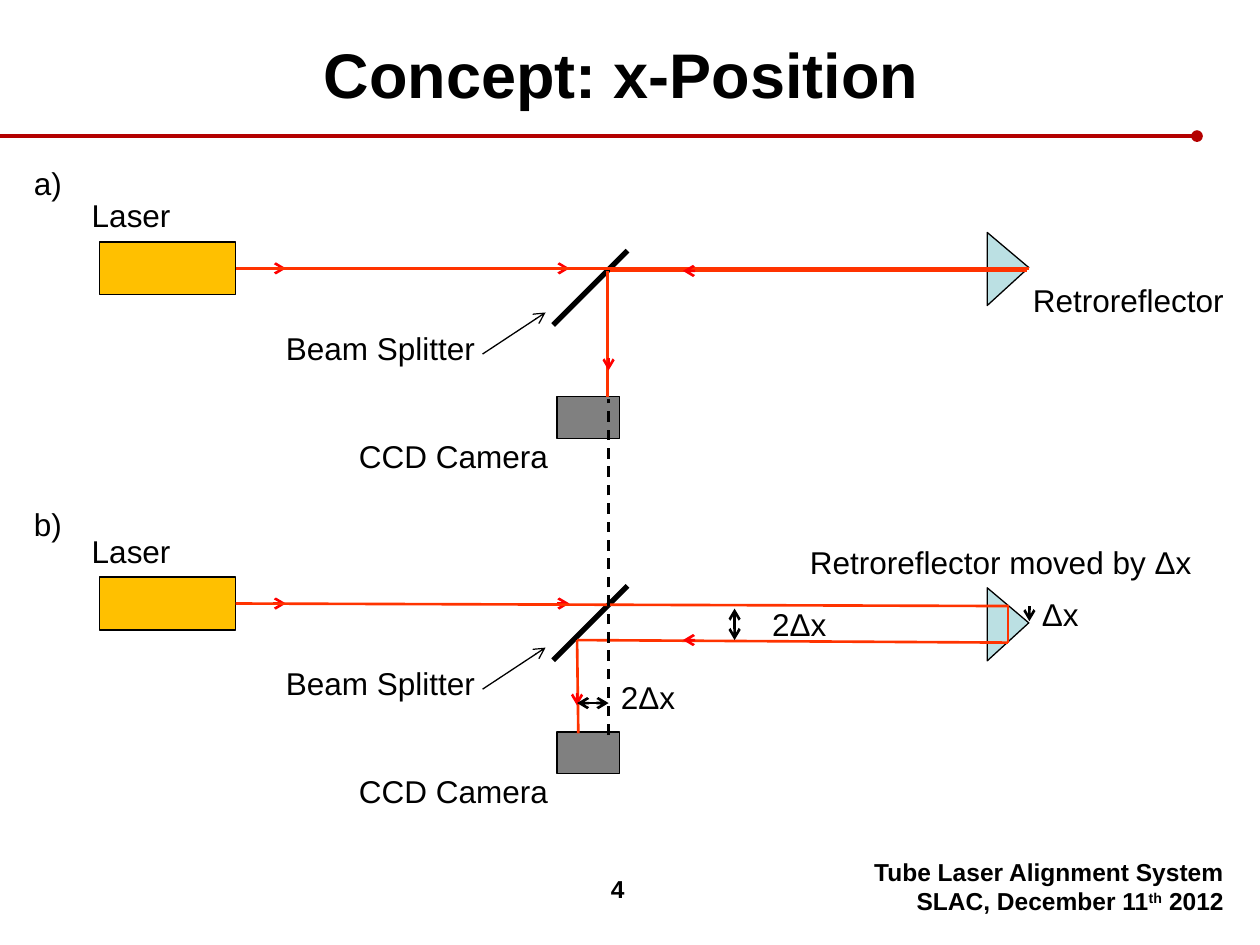
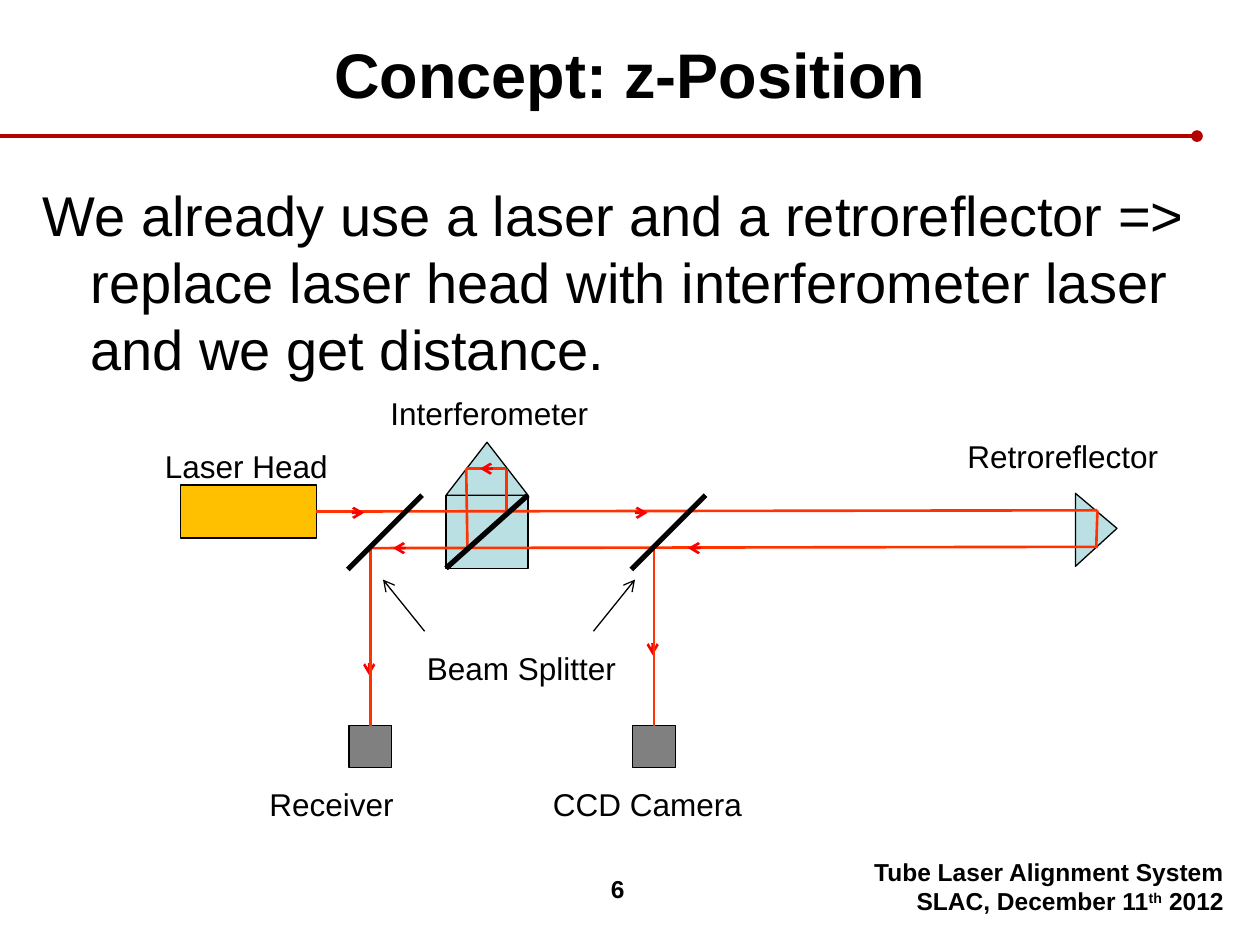
from pptx import Presentation
from pptx import util as u
from pptx.dml.color import RGBColor
from pptx.enum import dml, shapes, text
from pptx.oxml.ns import qn
from lxml import etree

PX = 9144
FONT = "Arial"
HUES = {
    "ink": "000000", "rule": "B40000", "beam": "FF3300", "mark": "FF0000",
    "glass": "BBE0E3", "laser": "FFC000", "sensor": "808080",
}
PENS = {
    "rule": ("rule", 2.25, {"tailEnd": "oval"}),
    "beam": ("beam", 1.5, {}),
    "mark": ("mark", 1.5, {"tailEnd": "arrow"}),
    "plate": ("ink", 3, {}),
    "hint": ("ink", 0.75, {"tailEnd": "arrow"}),
    "shift": ("ink", 1.5, {"tailEnd": "arrow"}),
    "span": ("ink", 1.5, {"headEnd": "arrow", "tailEnd": "arrow"}),
    "dash": ("ink", 1.5, {}),
}
RECT = shapes.MSO_SHAPE.RECTANGLE
TRI = shapes.MSO_SHAPE.ISOSCELES_TRIANGLE
LEFT, MID, RIGHT = text.PP_ALIGN.LEFT, text.PP_ALIGN.CENTER, text.PP_ALIGN.RIGHT


def write(page, words, x, y, w, h, size=18, bold=False, align=LEFT, wrap=False):
    box = page.shapes.add_textbox(x * PX, y * PX, w * PX, h * PX)
    frame = box.text_frame
    frame.word_wrap = wrap
    if not wrap:
        frame.auto_size = text.MSO_AUTO_SIZE.SHAPE_TO_FIT_TEXT
    rows = [[words]] if isinstance(words, str) else words
    for i, row in enumerate(rows):
        para = frame.add_paragraph() if i else frame.paragraphs[0]
        para.alignment = align
        for word in row:
            run = para.add_run()
            run.text = word
            run.font.name = FONT
            run.font.size = u.Pt(size)
            run.font.bold = bold
            run.font.color.rgb = RGBColor.from_string(HUES["ink"])
            if word == "th":
                run.font._element.set("baseline", "30000")
    return frame


def draw(page, pen, x1, y1, x2, y2):
    hue, width, ends = PENS[pen]
    line = page.shapes.add_connector(
        shapes.MSO_CONNECTOR.STRAIGHT, x1 * PX, y1 * PX, x2 * PX, y2 * PX)
    line.line.color.rgb = RGBColor.from_string(HUES[hue])
    line.line.width = u.Pt(width)
    if pen == "dash":
        line.line.dash_style = dml.MSO_LINE.DASH
    for end, head in ends.items():
        etree.SubElement(line.line._get_or_add_ln(), qn("a:" + end), type=head)
    etree.SubElement(line._element.spPr, qn("a:effectLst"))
    return line


xparts = [(TRI, "glass", 771, 197, 58, 33, 90), (TRI, "glass", 771, 479, 58, 33, 90)]
xlines, xtags = [], []
for dy in (0, 266):
    xparts += [
        (RECT, "laser", 79, 192 + dy, 108, 42, 0),
        (RECT, "sensor", 442, 315 + dy, 50, 33, 0),
    ]
    xlines += [
        ("plate", 498, 199 + dy, 439, 258 + dy),
        ("mark", 442, 213 + dy, 452, 213 + dy),
        ("mark", 217, 213 + dy, 227, 213 + dy),
        ("hint", 383, 281 + dy, 433, 248 + dy),
    ]
    xtags += [
        ("CCD Camera", 275, 342 + dy, 172),
        ("Laser", 63, 151 + dy, 83),
        ("Beam Splitter", 217, 256 + dy, 172),
    ]
xlines += [
    ("beam", 187, 213, 817, 213),
    ("beam", 815, 215, 484, 215),
    ("beam", 482, 315, 482, 215),
    ("mark", 483, 284, 483, 294),
    ("mark", 552, 215, 542, 215),
    ("beam", 187, 479, 800, 481),
    ("beam", 800, 510, 800, 480),
    ("beam", 800, 510, 458, 508),
    ("beam", 459, 582, 458, 508),
    ("mark", 458, 550, 458, 560),
    ("mark", 552, 508, 542, 508),
    ("span", 583, 483, 583, 508),
    ("span", 458, 558, 483, 558),
    ("dash", 483, 583, 483, 317),
    ("shift", 817, 481, 817, 493),
]
xtags += [
    ("a)", 17, 125, 43),
    ("b)", 17, 396, 43),
    ("Retroreflector", 810, 218, 173),
    ("Retroreflector moved by Δx", 633, 426, 325),
    ("2Δx", 603, 475, 64),
    ("2Δx", 483, 533, 64),
    ("Δx", 817, 467, 50),
]

zparts = [
    (TRI, "glass", 841, 404, 58, 33, 90),
    (TRI, "glass", 354, 351, 65, 42, 0),
    (RECT, "glass", 354, 393, 65, 58, 0),
    (RECT, "laser", 143, 385, 108, 42, 0),
]
zlines = [
    ("beam", 251, 406, 871, 405),
    ("beam", 871, 434, 294, 435),
    ("beam", 870, 435, 871, 405),
    ("beam", 402, 410, 402, 372),
    ("beam", 371, 435, 370, 372),
    ("beam", 402, 372, 370, 372),
    ("mark", 391, 372, 381, 372),
    ("mark", 293, 526, 293, 536),
    ("mark", 518, 510, 518, 520),
    ("hint", 471, 501, 504, 460),
    ("hint", 337, 501, 304, 460),
    ("plate", 419, 393, 354, 451),
]
for dx in (0, 225):
    zparts.append((RECT, "sensor", 277 + dx, 576, 34, 33, 0))
    zlines += [
        ("beam", 294 + dx, 576, 294 + dx, 435),
        ("plate", 335 + dx, 393, 276 + dx, 452),
        ("mark", 279 + dx, 407, 289 + dx, 407),
        ("mark", 322 + dx * 104 // 100, 435, 312 + dx * 104 // 100, 435),
    ]
ztags = [
    ("CCD Camera", 429, 618, 172),
    ("Receiver", 204, 618, 120),
    ("Retroreflector", 758, 342, 173),
    ("Laser Head", 121, 350, 151),
    ("Interferometer", 300, 308, 179),
    ("Beam Splitter", 329, 510, 172),
]
claim = ("We already use a laser and a retroreflector => replace laser head "
         "with interferometer laser and we get distance.")

deck = Presentation()
deck.slide_width, deck.slide_height = 1000 * PX, 750 * PX
for title, num, lead, parts, lines, tags in (
    ("Concept: x-Position ", "4", "", xparts, xlines, xtags),
    ("Concept: z-Position", "6", claim, zparts, zlines, ztags),
):
    page = deck.slides.add_slide(deck.slide_layouts[6])
    draw(page, "rule", 0, 108, 950, 108)
    write(page, num, 475, 689, 44, 33, 14, True)
    head = write(page, title, 50, 17, 900, 83, 36, True, MID, True)
    head.vertical_anchor = text.MSO_ANCHOR.MIDDLE
    write(page, [["Tube Laser Alignment System"], ["SLAC, December 11", "th", " 2012"]],
          550, 675, 431, 52, 14, True, RIGHT, True)
    if lead:
        body = write(page, lead, 24, 138, 950, 170, 32, wrap=True)
        props = body.paragraphs[0]._p.get_or_add_pPr()
        props.set("marL", str(38 * PX))
        props.set("indent", str(-38 * PX))

    spots = {}
    for kind, hue, x, y, w, h, turn in parts:
        part = page.shapes.add_shape(kind, x * PX, y * PX, w * PX, h * PX)
        part.shadow.inherit = False
        part.rotation = turn
        part.fill.solid()
        part.fill.fore_color.rgb = RGBColor.from_string(HUES[hue])
        part.line.color.rgb = RGBColor.from_string(HUES["ink"])
        part.line.width = u.Pt(0.75)
        if turn:
            part.adjustments[0] = 0.48
        if kind == RECT:
            spots[x + w // 2, y] = part, 0
            spots[x + w, y + h // 2] = part, 3

    for pen, x1, y1, x2, y2 in lines:
        line = draw(page, pen, x1, y1, x2, y2)
        if (x1, y1) in spots:
            line.begin_connect(*spots[x1, y1])

    for words, x, y, w in tags:
        write(page, words, x, y, w, 40)

deck.save("out.pptx")
